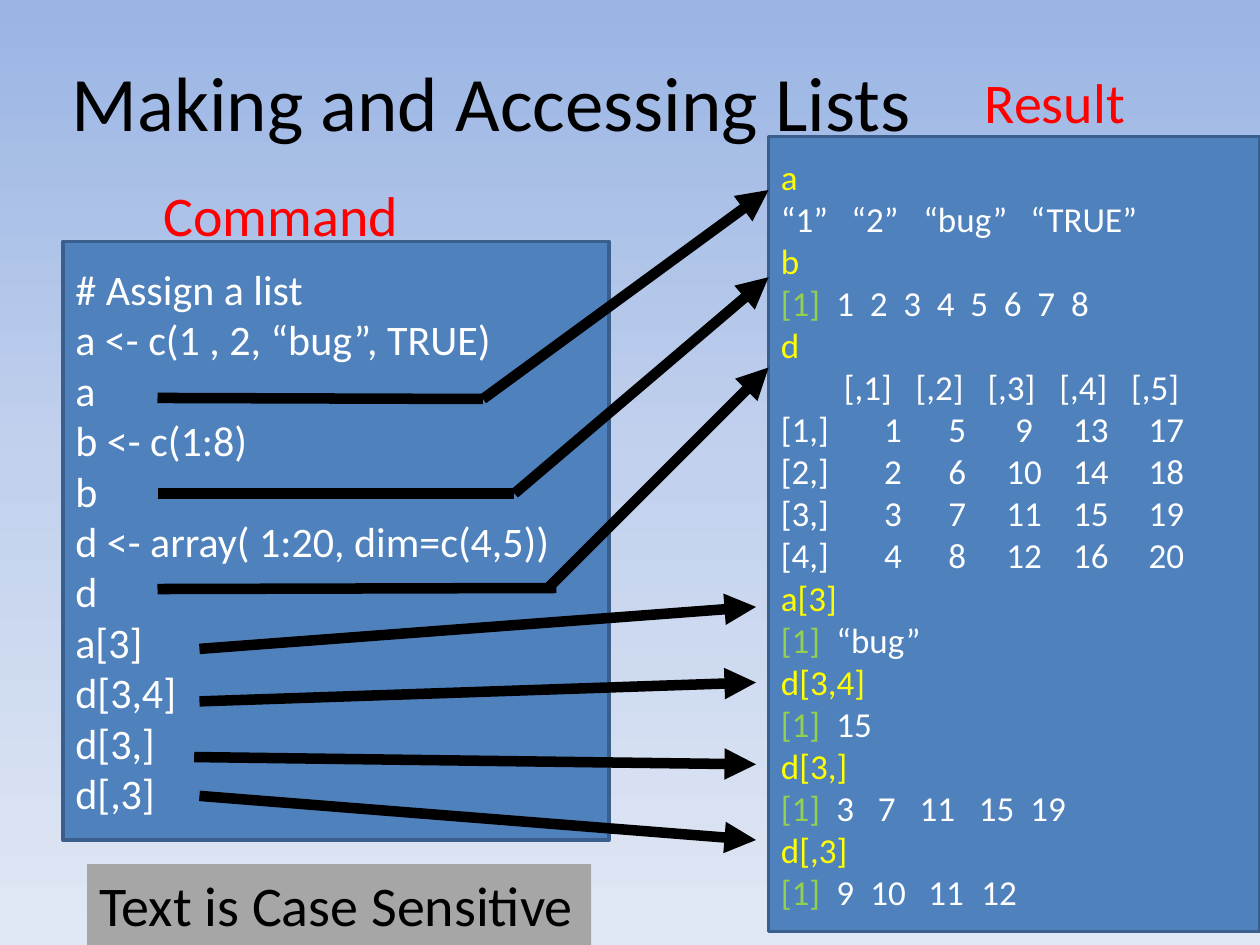
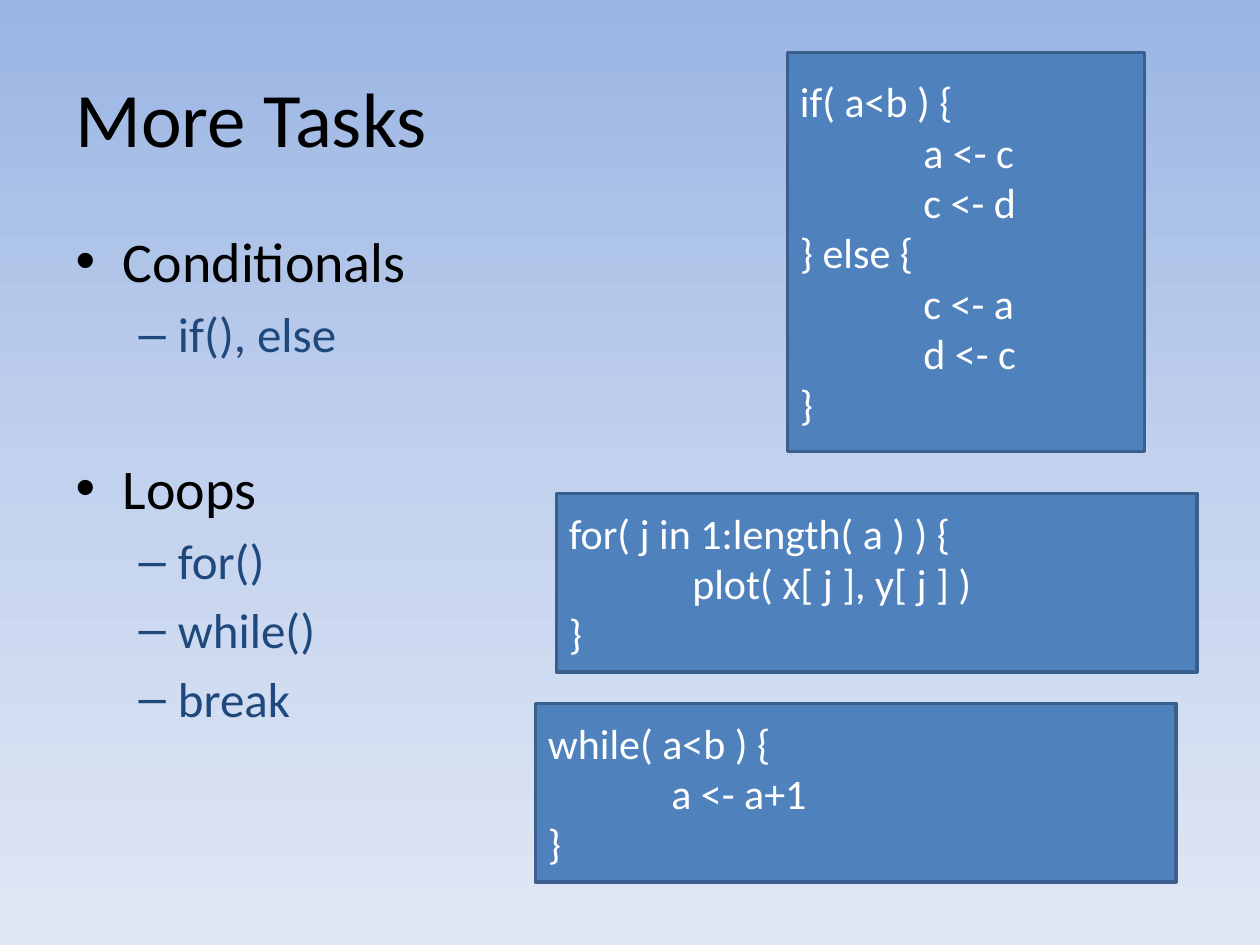
from copy import deepcopy

from lxml import etree
from pptx import Presentation
from pptx import util as u
from pptx.dml.color import RGBColor
from pptx.enum import shapes, text
from pptx.oxml.ns import qn

BLACK = RGBColor(0x00, 0x00, 0x00)
WHITE = RGBColor(0xFF, 0xFF, 0xFF)
RED = RGBColor(0xFF, 0x00, 0x00)
YELLOW = RGBColor(0xFF, 0xFF, 0x00)
GREEN = RGBColor(0x92, 0xD0, 0x50)
GREY = RGBColor(0xA6, 0xA6, 0xA6)
NAVY = RGBColor(0x1F, 0x49, 0x7D)
PANEL_FILL = RGBColor(0x4F, 0x81, 0xBD)
PANEL_EDGE = RGBColor(0x3A, 0x5F, 0x8C)
SKY = [RGBColor(0x9A, 0xB5, 0xE4), RGBColor(0xC2, 0xD1, 0xED), RGBColor(0xE1, 0xE8, 0xF5)]

FONT = "Calibri"
CELL = u.Pt(6)  # the slide is a grid of 120 by 90 cells
CODE_INDENT = 0.98


def cells(*counts):
    return [int(count * CELL) for count in counts]


def add_panel(slide, area, rows, size):
    """Add a blue panel; each row is (text, colour, tab alignment, tab stops in inches)."""
    panel = slide.shapes.add_shape(shapes.MSO_SHAPE.RECTANGLE, *cells(*area))
    panel.shadow.inherit = False
    panel.fill.solid()
    panel.fill.fore_color.rgb = PANEL_FILL
    panel.line.color.rgb = PANEL_EDGE
    panel.line.width = u.Pt(2)
    frame = panel.text_frame
    frame.word_wrap = True
    frame.vertical_anchor = text.MSO_ANCHOR.MIDDLE
    for number, (words, colour, tab_align, stops) in enumerate(rows):
        paragraph = frame.paragraphs[0] if number == 0 else frame.add_paragraph()
        paragraph.alignment = text.PP_ALIGN.LEFT
        if stops:
            tabs = etree.SubElement(paragraph._p.get_or_add_pPr(), qn("a:tabLst"))
            for stop in stops:
                etree.SubElement(tabs, qn("a:tab"), pos=str(u.Inches(stop)), algn=tab_align)
        paragraph.font.name = FONT
        paragraph.font.size = u.Pt(size)
        paragraph.font.color.rgb = colour
        if words.startswith("[1]"):
            index = paragraph.add_run()
            index.text = "[1]"
            index.font.color.rgb = GREEN
            words = words[len("[1]"):]
        paragraph.add_run().text = words


prs = Presentation()
prs.slide_width, prs.slide_height = cells(120, 90)

# Shared background: three-stop vertical gradient
sky = prs.slide_master.background.fill
sky.gradient()
sky.gradient_angle = 270
stop_list = prs.slide_master.element.find(".//" + qn("a:gsLst"))
stop_list.insert(1, deepcopy(stop_list[0]))
for stop, colour, position in zip(sky.gradient_stops, SKY, (0, 0.5, 1)):
    stop.color.rgb = colour
    stop.position = position

# Both slides with their titles
TITLE_ONLY, TITLE_AND_CONTENT = prs.slide_layouts[5], prs.slide_layouts[1]
slides = []
for layout, heading, area in [
    (TITLE_ONLY, "Making and Accessing Lists", (5.6, 2.9, 108, 13.4)),
    (TITLE_AND_CONTENT, "More Tasks", (6, 3.6, 108, 15)),
]:
    slide = prs.slides.add_slide(layout)
    title = slide.shapes.title
    title.left, title.top, title.width, title.height = cells(*area)
    title.text = heading
    paragraph = title.text_frame.paragraphs[0]
    paragraph.alignment = text.PP_ALIGN.LEFT
    paragraph.font.name = FONT
    paragraph.font.size = u.Pt(44)
    paragraph.font.color.rgb = BLACK
    slides.append(slide)
lists_slide, tasks_slide = slides

# Slide 1: commands and what they print
commands = [
    "# Assign a list",
    "a <- c(1 , 2, “bug”, TRUE)",
    "a",
    "b <- c(1:8)",
    "b",
    "d <- array( 1:20, dim=c(4,5))",
    "d",
    "a[3]",
    "d[3,4]",
    "d[3,]",
    "d[,3]",
]
add_panel(lists_slide, (6, 23, 52, 57), [(line, WHITE, "l", []) for line in commands], 24)

VALUE = 0.44  # where a printed value starts after its [1]
matrix_header = "".join(f"\t[,{column}]" for column in range(1, 6))
matrix_rows = [
    "\t".join([f"[{row},]"] + [str(value) for value in range(row, 21, 4)])
    for row in range(1, 5)
]
matrix_stops = [0.89, 1.4, 1.93, 2.46, 3.06]
printed = [
    ("a", YELLOW, "l", []),
    ("“1”\t“2”\t“bug”\t“TRUE”", WHITE, "l", [0.56, 1.13, 1.98]),
    ("b", YELLOW, "l", []),
    ("[1]\t1\t2\t3\t4\t5\t6\t7\t8", WHITE, "l", [VALUE + 0.266 * n for n in range(8)]),
    ("d", YELLOW, "l", []),
    (matrix_header, WHITE, "ctr", [0.69 + 0.57 * n for n in range(5)]),
    *[(row, WHITE, "ctr", matrix_stops) for row in matrix_rows],
    ("a[3]", YELLOW, "l", []),
    ("[1]\t“bug”", WHITE, "l", [VALUE]),
    ("d[3,4]", YELLOW, "l", []),
    ("[1]\t15", WHITE, "l", [VALUE]),
    ("d[3,]", YELLOW, "l", []),
    ("[1]\t3\t7\t11\t15\t19", WHITE, "l", [VALUE, 0.77, 1.1, 1.57, 1.98]),
    ("d[,3]", YELLOW, "l", []),
    ("[1]\t9\t10\t11\t12", WHITE, "l", [VALUE, 0.71, 1.17, 1.59]),
]
add_panel(lists_slide, (73.2, 13, 46.8, 75.7), printed, 20)

for words, area, colour, backdrop in [
    ("Command", (14.4, 16.6, 25.1, 7.7), RED, None),
    ("Result", (92.6, 5.8, 16, 7.7), RED, None),
    ("Text is Case Sensitive", (8.3, 82.3, 48, 7.7), BLACK, GREY),
]:
    label = lists_slide.shapes.add_textbox(*cells(*area))
    label.text_frame.word_wrap = False
    label.text_frame.text = words
    paragraph = label.text_frame.paragraphs[0]
    paragraph.font.name = FONT
    paragraph.font.size = u.Pt(32)
    paragraph.font.color.rgb = colour
    if backdrop is not None:
        label.fill.solid()
        label.fill.fore_color.rgb = backdrop

# From each command to its output: (start x, start y, end x, end y, has arrowhead)
for *ends, has_head in [
    (46, 38, 73.2, 18.1, True),
    (49, 47, 73.2, 26.4, True),
    (52.2, 56, 73.2, 35, True),
    (19, 61.8, 72, 57.8, True),
    (19, 66.8, 72, 65, True),
    (18.5, 72.1, 72, 72.8, True),
    (19, 75.8, 72, 80, True),
    (15, 37.9, 46, 38, False),
    (15, 47, 49, 47, False),
    (15, 56.1, 53, 56, False),
]:
    link = lists_slide.shapes.add_connector(shapes.MSO_CONNECTOR.STRAIGHT, *cells(*ends))
    link.line.color.rgb = BLACK
    link.line.width = u.Pt(6)
    if has_head:
        etree.SubElement(link.line._get_or_add_ln(), qn("a:tailEnd"), type="triangle")
    etree.SubElement(link._element.spPr, qn("a:effectLst"))

# Slide 2: outline and code samples
outline = tasks_slide.placeholders[1]
outline.left, outline.top, outline.width, outline.height = cells(6, 21, 108, 59.4)
topics = [
    ("Conditionals", 0),
    ("if(), else", 1),
    ("Loops", 0),
    ("for()", 1),
    ("while()", 1),
    ("break", 1),
]
for number, (words, level) in enumerate(topics):
    frame = outline.text_frame
    paragraph = frame.paragraphs[0] if number == 0 else frame.add_paragraph()
    paragraph.text = words
    paragraph.level = level
    if words == "Loops":
        paragraph.space_before = u.Pt(52)
    paragraph.font.name = FONT
    paragraph.font.size = u.Pt((32, 28)[level])
    paragraph.font.color.rgb = (BLACK, NAVY)[level]

for area, code in [
    ((75, 5, 34, 38),
     ["if( a<b ) {", "\ta <- c", "\tc <- d", "} else {", "\tc <- a", "\td <- c", "}"]),
    ((53, 47, 61, 17), ["for( j in 1:length( a ) ) {", "\tplot( x[ j ], y[ j ] )", "}"]),
    ((51, 67, 61, 17), ["while( a<b ) {", "\ta <- a+1", "}"]),
]:
    add_panel(tasks_slide, area, [(line, WHITE, "l", [CODE_INDENT]) for line in code], 24)

prs.save("out.pptx")
